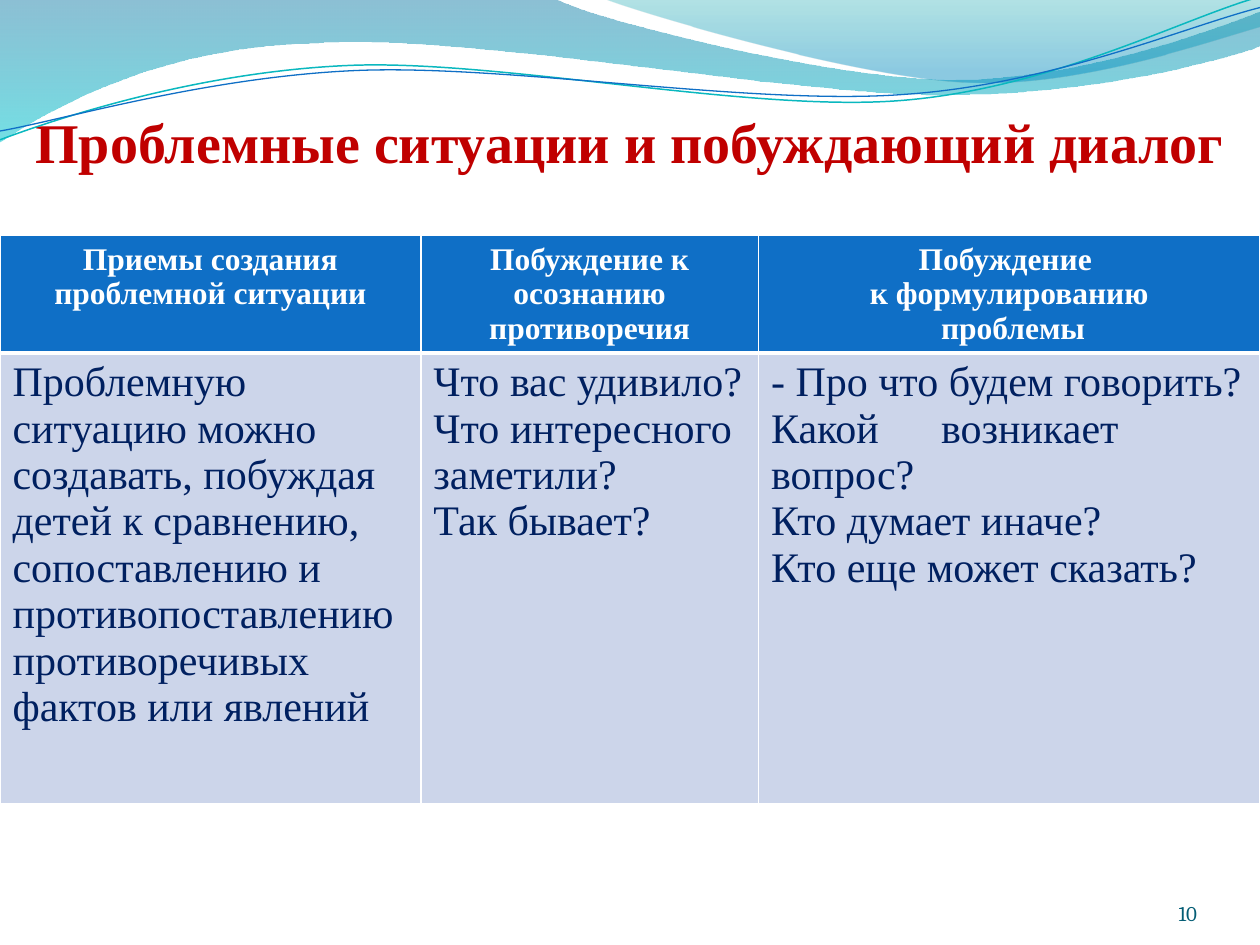
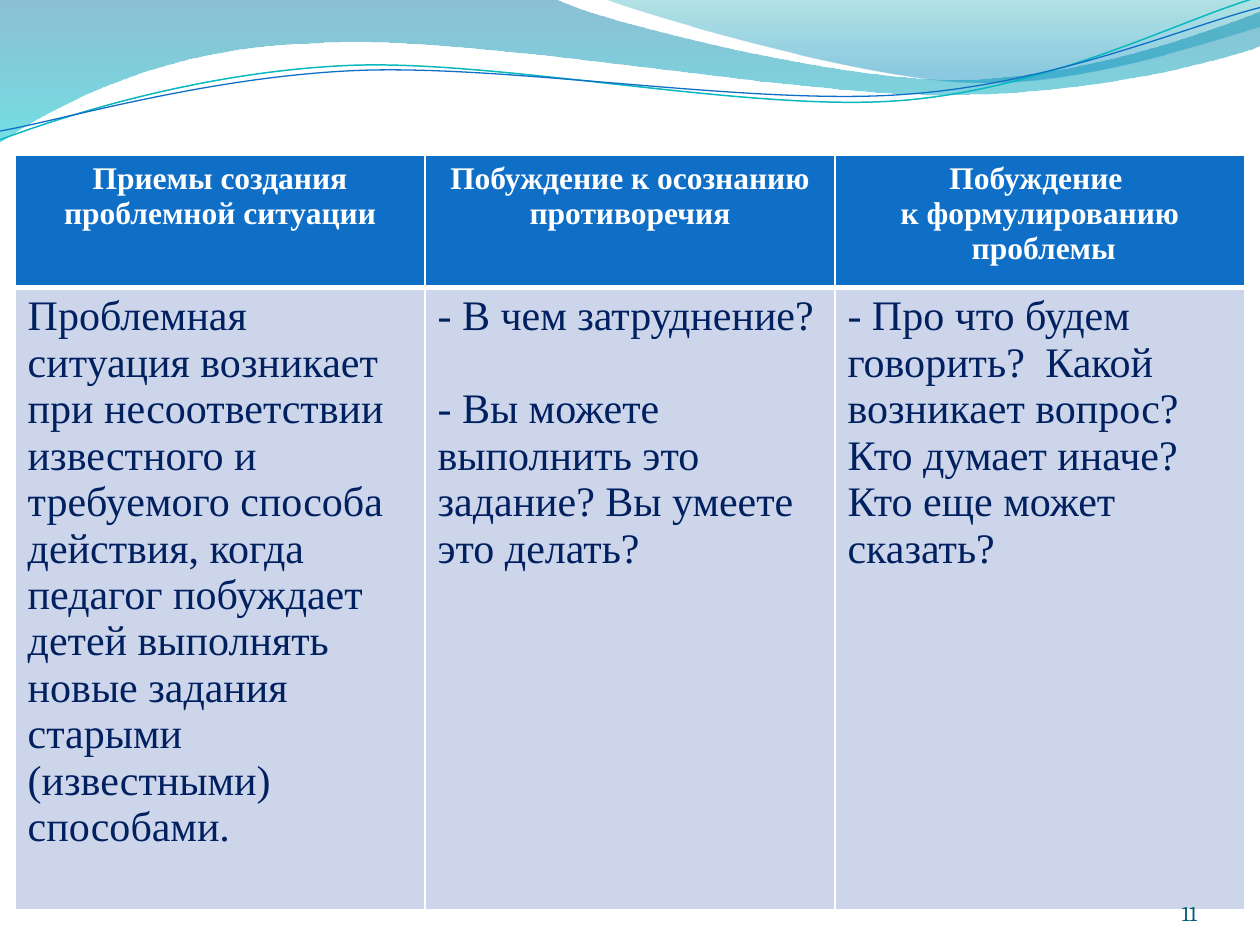
from lxml.etree import SubElement as Sub
from pptx import Presentation
from pptx.dml.color import RGBColor as RGB
from pptx.enum.text import MSO_ANCHOR as Anchor, MSO_AUTO_SIZE as Auto, PP_ALIGN as Align
from pptx.oxml.ns import qn
from pptx.oxml.xmlchemy import OxmlElement as Element
from pptx.util import Inches, Pt

COLORS = {
    "title": "C00000", "head": "0F6FC6", "cell": "CCD5EA", "white": "FFFFFF",
    "text": "002060", "number": "045D75", "teal": "0AB8BF",
    "deep": "0074A1", "aqua": "00C6CF", "sea": "00A1A9", "sky": "008BBF",
}
FONT = "Times New Roman"

# Each wave: start point, then straight (2 numbers) or cubic (6 numbers) parts
BANDS = [
    ((0, 0), [
        (4.4, -0.01), (4.76, 0.17, 6.64, 0.63, 7.58, 0.63),
        (8.53, 0.63, 9.58, 0.26, 10, 0.09), (10.01, 0.36),
        (9.83, 0.44, 8.7, 0.76, 7.46, 0.75), (6.22, 0.75, 3.82, 0.28, 2.57, 0.34),
        (1.29, 0.36, 0.46, 0.83, -0.01, 1.13), (0, 0)],
     [(0, "deep", 45), (1, "aqua", 55)]),
    ((4.79, -0.01), [
        (5.09, 0.11, 6.82, 0.62, 7.69, 0.65),
        (8.56, 0.69, 9.61, 0.32, 10, 0.21), (10, 0), (4.79, -0.01)],
     [(0, "sea", 30), (0.8, "sky", 45)]),
]
CURVES = [
    ((0, 1.11), [
        (0.48, 0.93, 1.58, 0.57, 2.77, 0.52), (3.95, 0.47, 5.93, 0.89, 7.13, 0.8),
        (8.33, 0.71, 9.38, 0.15, 9.98, -0.02)], "teal", 0.85),
    ((0, 1.04), [
        (0.47, 0.96, 1.64, 0.61, 2.83, 0.56), (4.03, 0.51, 5.97, 0.84, 7.17, 0.75),
        (8.36, 0.67, 9.41, 0.21, 10, 0.06)], "head", 0.75),
]

HEADS = [
    ["Приемы создания", "проблемной ситуации"],
    ["Побуждение к осознанию противоречия"],
    ["Побуждение ", "к формулированию", " проблемы"],
]
ASK = ["Кто думает иначе?", "Кто еще может сказать?"]


def color(name):
    return RGB.from_string(COLORS[name])


def style(par, size, tint, bold=False, font=FONT, align=Align.LEFT):
    par.alignment = align
    for run in par.runs:
        run.font.name, run.font.size, run.font.bold = font, Pt(size), bold
        run.font.color.rgb = color(tint)


def outline(slide, start, parts, close):
    pen = slide.shapes.build_freeform(*map(Inches, start))
    for part in parts:
        pairs = zip(part[::2], part[1::2])
        pen.add_line_segments([(Inches(x), Inches(y)) for x, y in pairs], close=False)
    shape = pen.convert_to_shape()
    shape.shadow.inherit = False
    # Join the three points of each cubic part into one curve
    track = next(shape._element.iter(qn("a:path")))
    lines = iter(track.findall(qn("a:lnTo")))
    for part in parts:
        group = [next(lines) for _ in range(len(part) // 2)]
        if len(group) == 3:
            curve = Element("a:cubicBezTo")
            group[0].addprevious(curve)
            for line in group:
                curve.append(line[0])
                track.remove(line)
    if close:
        Sub(track, qn("a:close"))
    return shape


def add_waves(slide):
    # Translucent bands
    for start, parts, stops in BANDS:
        band = outline(slide, start, parts, True)
        band.line.fill.background()
        band.fill.gradient()
        band.fill.gradient_angle = 270
        for stop, (place, name, alpha) in zip(band.fill.gradient_stops, stops):
            stop.position = place
            stop.color.rgb = color(name)
        tints = band._element.spPr.iter(qn("a:srgbClr"))
        for tint, (place, name, alpha) in zip(tints, stops):
            Sub(tint, qn("a:alpha"), val=str(alpha * 1000))
    # Thin curves
    for start, parts, name, width in CURVES:
        curve = outline(slide, start, parts, False)
        curve.fill.background()
        curve.line.color.rgb = color(name)
        curve.line.width = Pt(width)


def add_title(slide, text, box):
    title = slide.shapes.title
    title.left, title.top, title.width, title.height = map(Inches, box)
    frame = title.text_frame
    frame.text = text
    frame.auto_size = Auto.NONE
    frame.vertical_anchor = Anchor.BOTTOM
    frame.margin_left = frame.margin_right = frame.margin_bottom = 0
    style(frame.paragraphs[0], 32, "title", True, align=Align.CENTER)


def add_number(slide, number, box=(8.67, 6.95, 0.83, 0.4)):
    frame = slide.shapes.add_textbox(*map(Inches, box)).text_frame
    frame.word_wrap = True
    frame.margin_left = frame.margin_right = frame.margin_top = frame.margin_bottom = 0
    frame.vertical_anchor = Anchor.BOTTOM
    frame.text = str(number)
    style(frame.paragraphs[0], 12, "number", font="Cambria", align=Align.RIGHT)


def add_edges(cell, base):
    props = cell._tc.get_or_add_tcPr()
    for place, side in enumerate("LRTB"):
        width = base if side == "B" else 1
        edge = Element(f"a:ln{side}")
        edge.set("w", str(Pt(width)))
        Sub(Sub(edge, qn("a:solidFill")), qn("a:srgbClr"), val=COLORS["white"])
        props.insert(place, edge)


def add_tab(cell, place):
    props = cell.text_frame.paragraphs[0]._p.get_or_add_pPr()
    Sub(Sub(props, qn("a:tabLst")), qn("a:tab"), pos=str(Inches(place)), algn="l")


def add_grid(slide, left, top, widths, heights, body):
    box = left, top, sum(widths), sum(heights)
    grid = slide.shapes.add_table(2, len(widths), *map(Inches, box)).table
    for col, width in zip(grid.columns, widths):
        col.width = Inches(width)
    for row, height in zip(grid.rows, heights):
        row.height = Inches(height)
    looks = [("head", 3, (18, "white", True, FONT, Align.CENTER)),
             ("cell", 1, (24, "text"))]
    for r, (texts, (fill, base, look)) in enumerate(zip((HEADS, body), looks)):
        for c, lines in enumerate(texts):
            cell = grid.cell(r, c)
            cell.fill.solid()
            cell.fill.fore_color.rgb = color(fill)
            add_edges(cell, base)
            cell.text_frame.text = "\n".join(lines)
            for par in cell.text_frame.paragraphs:
                style(par, *look)
    return grid


def add_page(deck, layout):
    slide = deck.slides.add_slide(deck.slide_layouts[layout])
    add_waves(slide)
    return slide


def compare_page(deck):
    slide = add_page(deck, 5)
    add_title(slide, "Проблемные ситуации и побуждающий диалог", (0, 0.7, 10, 0.69))
    grid = add_grid(slide, 0, 1.87, (3.34, 2.68, 3.98), (0.93, 3.58), [
        ["Проблемную ситуацию можно создавать, побуждая детей к сравнению, "
         "сопоставлению и противопоставлению противоречивых фактов или явлений"],
        ["Что вас удивило? Что интересного заметили?\vТак бывает?"],
        ["- Про что будем говорить? Какой\tвозникает вопрос?"] + ASK,
    ])
    add_tab(grid.cell(1, 2), 1.35)
    add_number(slide, 10)


def method_page(deck):
    slide = add_page(deck, 6)
    grid = add_grid(slide, 0.12, 1.23, [9.76 / 3] * 3, (1.05, 4.94), [
        ["Проблемная ситуация возникает при несоответствии известного и "
         "требуемого способа действия, когда педагог побуждает детей выполнять "
         "новые задания старыми (известными) способами."],
        ["- В чем затруднение?",
         "- Вы можете выполнить это задание? Вы умеете это делать?"],
        ["- Про что будем говорить?\tКакой возникает вопрос?"] + ASK,
    ])
    add_tab(grid.cell(1, 2), 1.57)
    # One line of space between the two questions
    grid.cell(1, 1).text_frame.paragraphs[1].space_before = Pt(26.5)
    add_number(slide, 11)


def main():
    deck = Presentation()
    deck.slide_width, deck.slide_height = Inches(10), Inches(7.5)
    compare_page(deck)
    method_page(deck)
    deck.save("out.pptx")


if __name__ == "__main__":
    main()
